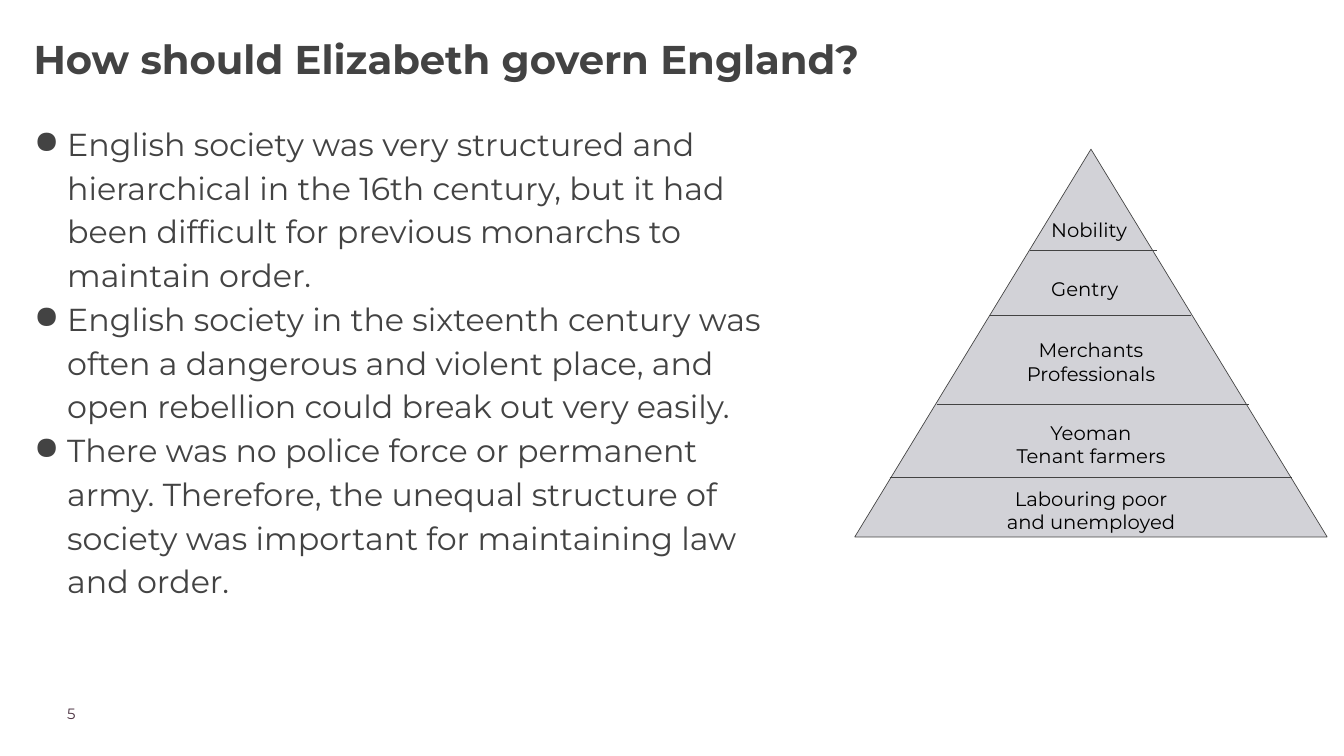
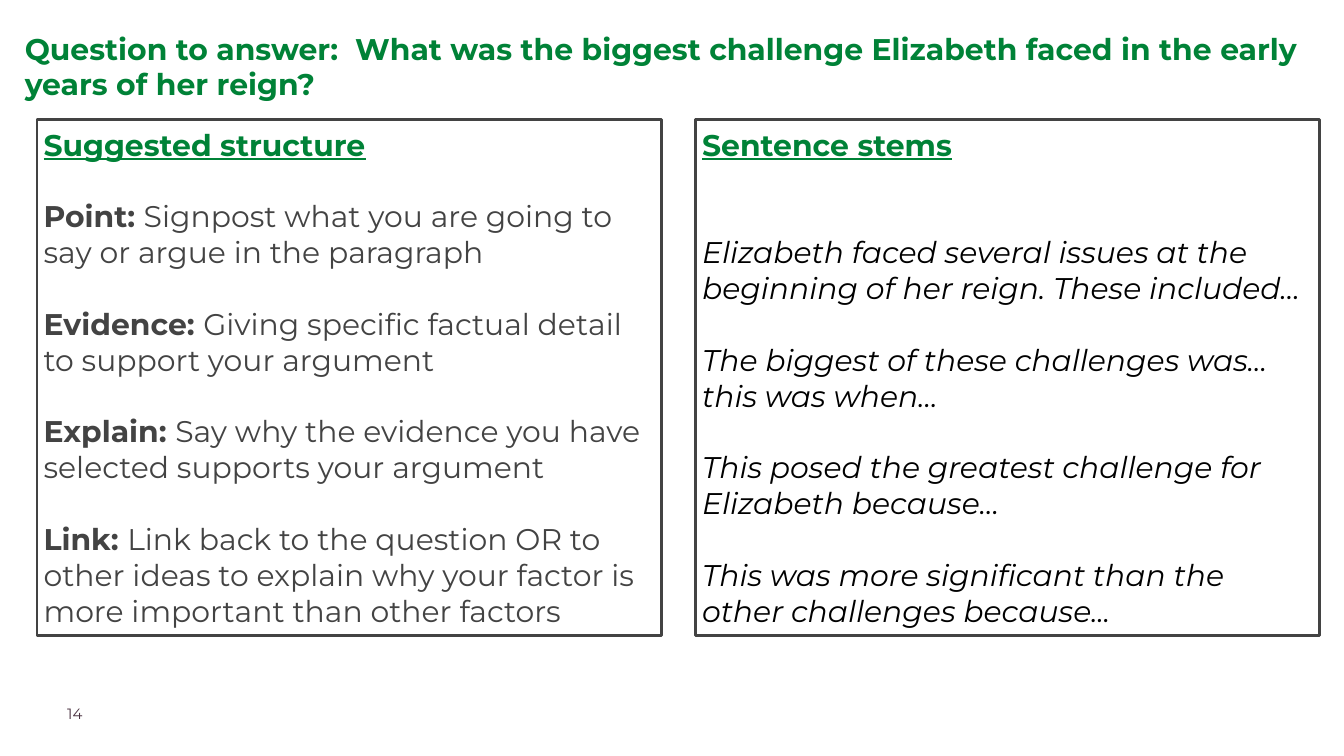
from lxml import etree
from pptx import Presentation
from pptx.dml.color import RGBColor
from pptx.enum.shapes import MSO_CONNECTOR, MSO_SHAPE
from pptx.enum.text import MSO_ANCHOR, PP_ALIGN
from pptx.oxml.ns import qn
from pptx.util import Inches, Pt

LEFT, CENTER = PP_ALIGN.LEFT, PP_ALIGN.CENTER
FONT = "Montserrat"
GREY, GREEN, BLACK = "434343", "008237", "000000"
PLUM, SILVER = "4B3241", "D2D2D7"

GOVERN_TITLE = "How should Elizabeth govern England?"
GOVERN_POINTS = [
    "English society was very structured and hierarchical in the 16th century, "
    "but it had been difficult for previous monarchs to maintain order.",
    "English society in the sixteenth century was often a dangerous and violent "
    "place, and open rebellion could break out very easily.",
    "There was no police force or permanent army. Therefore, the unequal "
    "structure of society was important for maintaining law and order.",
]
PYRAMID = (12.72, 2.22, 7.03, 5.77)
# lines of text, top, width, height, alignment
RANKS = [
    (["Nobility"], 3.15, 1.38, 0.54, LEFT),
    (["Gentry"], 4.02, 1.38, 0.54, LEFT),
    (["Merchants", "Professionals"], 4.93, 2.12, 0.54, CENTER),
    (["Yeoman", "Tenant farmers"], 6.16, 2.71, 0.54, CENTER),
    (["Labouring poor and unemployed"], 7.14, 2.71, 0.85, CENTER),
]
# left end, right end, height on the slide
DIVIDERS = [(15.33, 17.22, 3.73), (14.73, 17.72, 4.69),
            (13.94, 18.58, 6.01), (13.24, 19.23, 7.11)]

QUESTION = ("Question to answer:  What was the biggest challenge Elizabeth faced "
            "in the early years of her reign?")
STRUCTURE = [
    ("Point: ", "Signpost what you are going to say or argue in the paragraph"),
    ("Evidence: ", "Giving specific factual detail to support your argument"),
    ("Explain: ", "Say why the evidence you have selected supports your argument"),
    ("Link: ", "Link back to the question OR to other ideas to explain why your "
               "factor is more important than other factors"),
]
STEMS = [
    "Elizabeth faced several issues at the beginning of her reign. These included…",
    "The biggest of these challenges was… this was when…",
    "This posed the greatest challenge for Elizabeth because…",
    "This was more significant than the other challenges because...",
]
PANEL_LEFT, PANEL_TOP, PANEL_W, PANEL_H, PANEL_STEP = 0.55, 1.78, 9.29, 7.68, 9.8
PANEL_SIZE, PANEL_LINE = 32, 38.4


def rgb(color):
    return RGBColor.from_string(color)


def style(font, size, color, bold=False, italic=False, underline=False):
    font.name, font.size = FONT, Pt(size)
    font.color.rgb = rgb(color)
    font.bold, font.italic, font.underline = bold, italic, underline


def set_frame(tf, inset):
    tf.word_wrap = True
    tf.vertical_anchor = MSO_ANCHOR.TOP
    tf.margin_left = tf.margin_top = tf.margin_right = tf.margin_bottom = Inches(inset)


def add_text(slide, box, lines, size, color, bold=False, inset=0.0,
             align=LEFT, spacing=None):
    tf = slide.shapes.add_textbox(*map(Inches, box)).text_frame
    set_frame(tf, inset)
    tf.text = "\n".join(lines)
    for p in tf.paragraphs:
        p.alignment = align
        p.line_spacing = spacing
        style(p.runs[0].font, size, color, bold)
    return tf


def add_bullet(p):
    pPr = p._p.get_or_add_pPr()
    pPr.set("marL", str(Inches(0.5)))
    pPr.set("indent", str(Inches(-0.49)))
    bu_color = etree.SubElement(pPr, qn("a:buClr"))
    etree.SubElement(bu_color, qn("a:srgbClr"), val=GREY)
    etree.SubElement(pPr, qn("a:buChar"), char="●")


def add_outlined(slide, kind, box, fill, weight):
    sp = slide.shapes.add_shape(kind, *map(Inches, box))
    sp.shadow.inherit = False
    if fill:
        sp.fill.solid()
        sp.fill.fore_color.rgb = rgb(fill)
    else:
        sp.fill.background()
    sp.line.color.rgb = rgb(GREY)
    sp.line.width = Pt(weight)
    return sp


def add_divider(slide, x1, x2, y):
    line = slide.shapes.add_connector(MSO_CONNECTOR.STRAIGHT, Inches(x1), Inches(y),
                                      Inches(x2), Inches(y))
    line.line.color.rgb = rgb(GREY)
    line.line.width = Pt(0.75)
    etree.SubElement(line._element.spPr, qn("a:effectLst"))


def add_panel(slide, column, heading, items, first_gap):
    """Boxed list: items are lists of (text, style options), gaps are in lines."""
    box = (PANEL_LEFT + column * PANEL_STEP, PANEL_TOP, PANEL_W, PANEL_H)
    tf = add_outlined(slide, MSO_SHAPE.RECTANGLE, box, None, 3).text_frame
    set_frame(tf, 0.1)
    p = tf.paragraphs[0]
    p.text = heading
    p.alignment = LEFT
    style(p.runs[0].font, PANEL_SIZE, GREEN, bold=True, underline=True)
    for i, runs in enumerate(items):
        p = tf.add_paragraph()
        p.alignment = LEFT
        p.space_before = Pt(PANEL_LINE * (1 if i else first_gap))
        for text, options in runs:
            r = p.add_run()
            r.text = text
            style(r.font, PANEL_SIZE, **options)


def add_slide(prs, number):
    slide = prs.slides.add_slide(prs.slide_layouts[6])
    add_text(slide, (1, 10.48, 1.57, 0.39), [str(number)], 16, PLUM)
    return slide


def build_govern(prs):
    slide = add_slide(prs, 5)
    tf = add_text(slide, (0.5, 1.77, 11.14, 6.22), GOVERN_POINTS, 34, GREY, spacing=1.15)
    for p in tf.paragraphs:
        add_bullet(p)
    add_text(slide, (0.5, 0.41, 18.86, 1.06), [GOVERN_TITLE], 43, GREY,
             bold=True, spacing=1.15)

    add_outlined(slide, MSO_SHAPE.ISOSCELES_TRIANGLE, PYRAMID, SILVER, 0.75)
    middle = PYRAMID[0] + PYRAMID[2] / 2
    for lines, top, width, height, align in RANKS:
        add_text(slide, (middle - width / 2, top, width, height), lines, 21, BLACK,
                 inset=0.1, align=align)
    for x1, x2, y in DIVIDERS:
        add_divider(slide, x1, x2, y)


def build_question(prs):
    slide = add_slide(prs, 14)
    structure = [[(label, {"color": GREY, "bold": True}), (text, {"color": GREY})]
                 for label, text in STRUCTURE]
    stems = [[(text, {"color": BLACK, "italic": True})] for text in STEMS]
    add_panel(slide, 0, "Suggested structure", structure, first_gap=1)
    add_panel(slide, 1, "Sentence stems", stems, first_gap=2)
    add_text(slide, (0.27, 0.35, 19.25, 1.11), [QUESTION], 32, GREEN,
             bold=True, inset=0.1)


def main():
    prs = Presentation()
    prs.slide_width, prs.slide_height = Inches(20), Inches(11.25)
    build_govern(prs)
    build_question(prs)
    prs.save("out.pptx")


if __name__ == "__main__":
    main()
